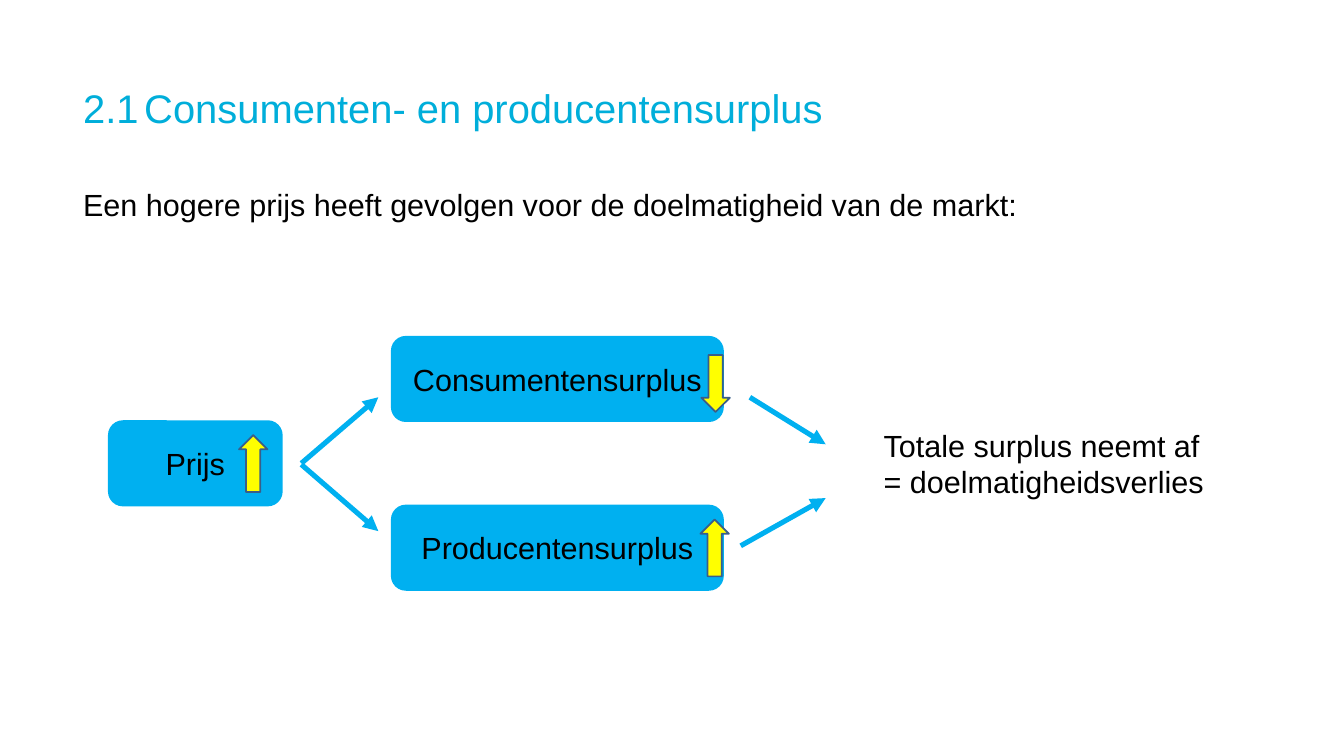
from dataclasses import dataclass

from lxml.etree import SubElement as Sub
from pptx import Presentation
from pptx.dml.color import RGBColor
from pptx.enum.shapes import MSO_CONNECTOR as Line, MSO_SHAPE as Kind
from pptx.enum.text import MSO_ANCHOR as Anchor, PP_ALIGN as Align
from pptx.oxml.ns import qn
from pptx.shapes.autoshape import Shape
from pptx.slide import Slide
from pptx.text.text import TextFrame
from pptx.util import Pt

BLUE, CYAN, BLACK = "00B0F0", "00AEDA", "000000"
YELLOW, NAVY = "FFFF00", "395E89"
HIGH = 99.4
TOP = 396.7
FONT = {"name": "Arial", "size": Pt(36)}
FLUSH = {"margin_left": 0, "margin_right": 0, "margin_top": 0, "margin_bottom": 0}


@dataclass
class Label:
    text: str
    left: float
    top: float
    width: float
    height: float
    size: float = 36
    color: str = BLACK
    flush: bool = False
    tab: float = 0


@dataclass
class Box:
    text: str
    left: float
    row: int
    width: float
    mark: Kind
    mark_x: float
    mark_y: float


@dataclass
class Arrow:
    x1: float
    y1: float
    x2: float
    y2: float


LABELS = [
    Label("2.1\tConsumenten- en producentensurplus", 97.9, 97.9, 1386, 65.5,
          47, CYAN, True, 72),
    Label("Een hogere prijs heeft gevolgen voor de doelmatigheid van de markt:",
          90.7, 215.3, 1131, 51),
    Label("Totale surplus neemt af = doelmatigheidsverlies",
          1033.9, 499, 396.7, 94.3),
]
BOXES = [
    Box("Prijs", 128.2, 1, 203.8, Kind.UP_ARROW, 281.5, 512.6),
    Box("Producentensurplus", 461.5, 2, 390.2, Kind.UP_ARROW, 825.1, 612),
    Box("Consumentensurplus", 461.5, 0, 390.2, Kind.DOWN_ARROW, 826.2, 418.3),
]
ARROWS = [
    Arrow(355, 547.2, 445.7, 625.7),
    Arrow(355, 545.8, 445.7, 468),
    Arrow(883.4, 468, 972.7, 523.4),
    Arrow(872.6, 643, 972.7, 586.8),
]


def rgb(code: str) -> RGBColor:
    return RGBColor.from_string(code)


def apply(item: object, values: dict) -> None:
    for key, value in values.items():
        setattr(item, key, value)


def write(frame: TextFrame, text: str, size: float = 36, color: str = BLACK) -> None:
    run = frame.paragraphs[0].add_run()
    run.text = text
    apply(run.font, FONT | {"size": Pt(size)})
    run.font.color.rgb = rgb(color)


def add_label(slide: Slide, label: Label) -> None:
    area = map(Pt, (label.left, label.top, label.width, label.height))
    frame = slide.shapes.add_textbox(*area).text_frame
    apply(frame, {"word_wrap": True} | (FLUSH if label.flush else {}))
    if label.tab:
        props = frame.paragraphs[0]._p.get_or_add_pPr()
        Sub(Sub(props, qn("a:tabLst")), qn("a:tab"),
            pos=str(Pt(label.tab)), algn="l")
    write(frame, label.text, label.size, label.color)


def add_form(slide: Slide, kind: Kind, left: float, top: float,
             width: float, height: float, fill: str, edge: str) -> Shape:
    form = slide.shapes.add_shape(kind, *map(Pt, (left, top, width, height)))
    form.shadow.inherit = False
    form.fill.solid()
    form.fill.fore_color.rgb = rgb(fill)
    form.line.color.rgb = rgb(edge)
    form.line.width = Pt(2)
    return form


def add_box(slide: Slide, box: Box) -> None:
    form = add_form(slide, Kind.ROUNDED_RECTANGLE, box.left,
                    TOP + box.row * HIGH, box.width, HIGH, BLUE, BLUE)
    frame = form.text_frame
    apply(frame, {"word_wrap": True, "vertical_anchor": Anchor.MIDDLE})
    frame.paragraphs[0].alignment = Align.CENTER
    write(frame, box.text)
    add_form(slide, box.mark, box.mark_x, box.mark_y, 33.6, 67, YELLOW, NAVY)


def add_arrow(slide: Slide, arrow: Arrow) -> None:
    ends = map(Pt, (arrow.x1, arrow.y1, arrow.x2, arrow.y2))
    link = slide.shapes.add_connector(Line.STRAIGHT, *ends)
    link.line.color.rgb = rgb(BLUE)
    link.line.width = Pt(6)
    Sub(link.line._get_or_add_ln(), qn("a:tailEnd"), type="triangle")
    Sub(link._element.spPr, qn("a:effectLst"))


def main() -> None:
    deck = Presentation()
    apply(deck, {"slide_width": Pt(1583.3), "slide_height": Pt(890.6)})
    slide = deck.slides.add_slide(deck.slide_layouts[6])
    for label in LABELS:
        add_label(slide, label)
    for arrow in ARROWS:
        add_arrow(slide, arrow)
    for box in BOXES:
        add_box(slide, box)
    deck.save("out.pptx")


if __name__ == "__main__":
    main()
